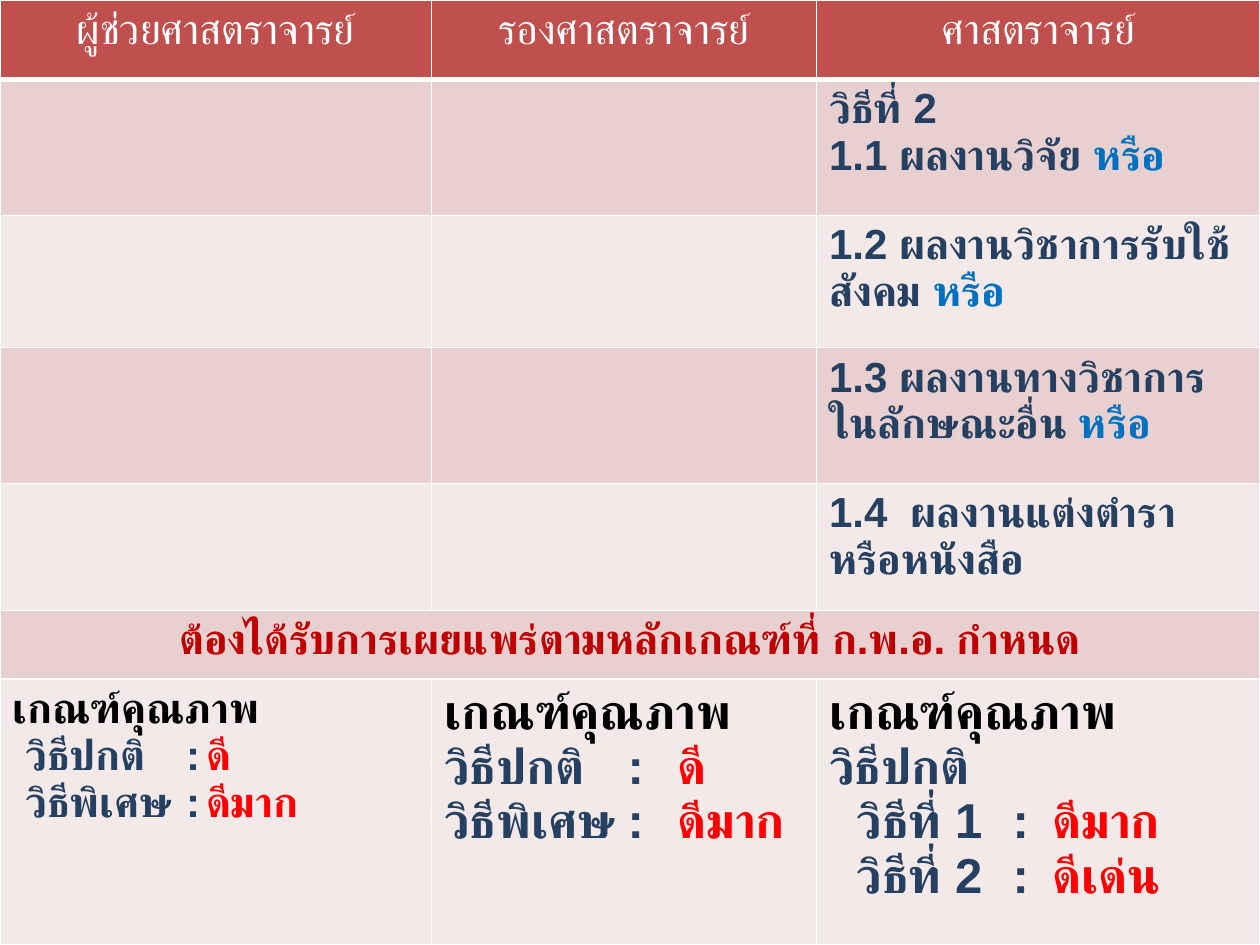
from dataclasses import dataclass

from lxml.etree import SubElement
from pptx import Presentation
from pptx.dml.color import RGBColor
from pptx.enum.text import PP_ALIGN
from pptx.oxml.ns import qn
from pptx.util import Cm, Pt


@dataclass(frozen=True)
class Theme:
    font: str = "Arial"
    body: int = 24
    large: int = 28
    white: str = "FFFFFF"
    black: str = "000000"
    header: str = "C0504D"
    bands: tuple = ("E8D0D0", "F4E9E9")
    navy: str = "254061"
    blue: str = "0070C0"
    red: str = "FF0000"
    dark_red: str = "C00000"
    thin: int = 1
    thick: int = 3


T = Theme()
COLS = [8.7, 7.76, 8.94]
ROWS = [1.6, 2.74, 2.67, 2.74, 2.56, 1.38, 5.36]

RANKS = ["ผู้ช่วยศาสตราจารย์", "รองศาสตราจารย์", "ศาสตราจารย์"]
OR = ("หรือ", T.blue)
WORKS = [
    [[("วิธีที่ 2", T.navy)], [("1.1 ผลงานวิจัย ", T.navy), OR]],
    [[("1.2 ผลงานวิชาการรับใช้สังคม ", T.navy), OR]],
    [[("1.3 ผลงานทางวิชาการในลักษณะอื่น ", T.navy), OR]],
    [[("1.4  ผลงานแต่งตำรา หรือหนังสือ", T.navy)]],
]
PUBLISHING = "ต้องได้รับการเผยแพร่ตามหลักเกณฑ์ที่ ก.พ.อ. กำหนด"
CRITERIA = "เกณฑ์คุณภาพ"
NORMAL, SPECIAL = "วิธีปกติ", "วิธีพิเศษ"
# Each column: text size, tab stops in cm, lines under the heading
QUALITY = [
    (T.body, [0.25, 3.5, 3.9],
     [("\t" + NORMAL, "ดี"), ("\t" + SPECIAL, "ดีมาก")]),
    (T.large, [3.7, 4.7], [(NORMAL, "ดี"), (SPECIAL, "ดีมาก")]),
    (T.large, [0.55, 3.7, 4.5],
     [(NORMAL, None), ("\tวิธีที่ 1", "ดีมาก"), ("\tวิธีที่ 2", "ดีเด่น")]),
]


def style_cell(cell, fill, bottom):
    tc_pr = cell._tc.get_or_add_tcPr()
    for side in "LRTB":
        width = bottom if side == "B" else T.thin
        ln = SubElement(tc_pr, qn(f"a:ln{side}"), w=str(Pt(width)))
        SubElement(SubElement(ln, qn("a:solidFill")), qn("a:srgbClr"), val=T.white)
    cell.fill.solid()
    cell.fill.fore_color.rgb = RGBColor.from_string(fill)


def add_run(p, text, color, size, bold):
    r = p.add_run()
    r.text = text
    for name, value in {"name": T.font, "size": Pt(size), "bold": bold}.items():
        setattr(r.font, name, value)
    r.font.color.rgb = RGBColor.from_string(color)
    SubElement(r._r.get_or_add_rPr(), qn("a:cs"), typeface=T.font)


def write(cell, lines, size=T.body, bold=True, align=PP_ALIGN.LEFT, tabs=()):
    """Fill a cell with lines, each a list of (text, colour) runs."""
    tf = cell.text_frame
    for i, line in enumerate(lines):
        p = tf.add_paragraph() if i else tf.paragraphs[0]
        p.alignment = align
        if tabs:
            tab_list = SubElement(p._p.get_or_add_pPr(), qn("a:tabLst"))
            for stop in tabs:
                SubElement(tab_list, qn("a:tab"), pos=str(Cm(stop)), algn="l")
        for text, color in line:
            add_run(p, text, color, size, bold)


def write_quality(cell, size, tabs, levels):
    lines = [[(CRITERIA, T.black)]]
    for method, level in levels:
        if level:
            lines.append([(f"{method}\t:\t", T.navy), (level, T.red)])
        else:
            lines.append([(method, T.navy)])
    write(cell, lines, size, tabs=tabs)


def add_grid(s, left, top, width, height):
    """Add the table with its banded fills and white rules."""
    table = s.shapes.add_table(len(ROWS), len(COLS), Cm(left), Cm(top),
                               Cm(width), Cm(height)).table
    for col, share in zip(table.columns, COLS):
        col.width = Cm(width * share / sum(COLS))
    for row, share in zip(table.rows, ROWS):
        row.height = Cm(height * share / sum(ROWS))
    for i in range(len(ROWS)):
        for j in range(len(COLS)):
            fill = T.bands[(i - 1) % 2] if i else T.header
            style_cell(table.cell(i, j), fill, T.thin if i else T.thick)
    return table


def add_rank_table(s, left, top, width, height):
    table = add_grid(s, left, top, width, height)
    for j, rank in enumerate(RANKS):
        write(table.cell(0, j), [[(rank, T.white)]], bold=False,
              align=PP_ALIGN.CENTER)
    for i, lines in enumerate(WORKS, 1):
        write(table.cell(i, 2), lines)
    table.cell(5, 0).merge(table.cell(5, 2))
    write(table.cell(5, 0), [[(PUBLISHING, T.dark_red)]], align=PP_ALIGN.CENTER)
    for j, quality in enumerate(QUALITY):
        write_quality(table.cell(6, j), *quality)


def main():
    prs = Presentation()
    prs.slide_width, prs.slide_height = Cm(25.4), Cm(19.05)
    s = prs.slides.add_slide(prs.slide_layouts[6])
    add_rank_table(s, 0, 0, 25.4, 19.05)
    prs.save("out.pptx")


if __name__ == "__main__":
    main()
